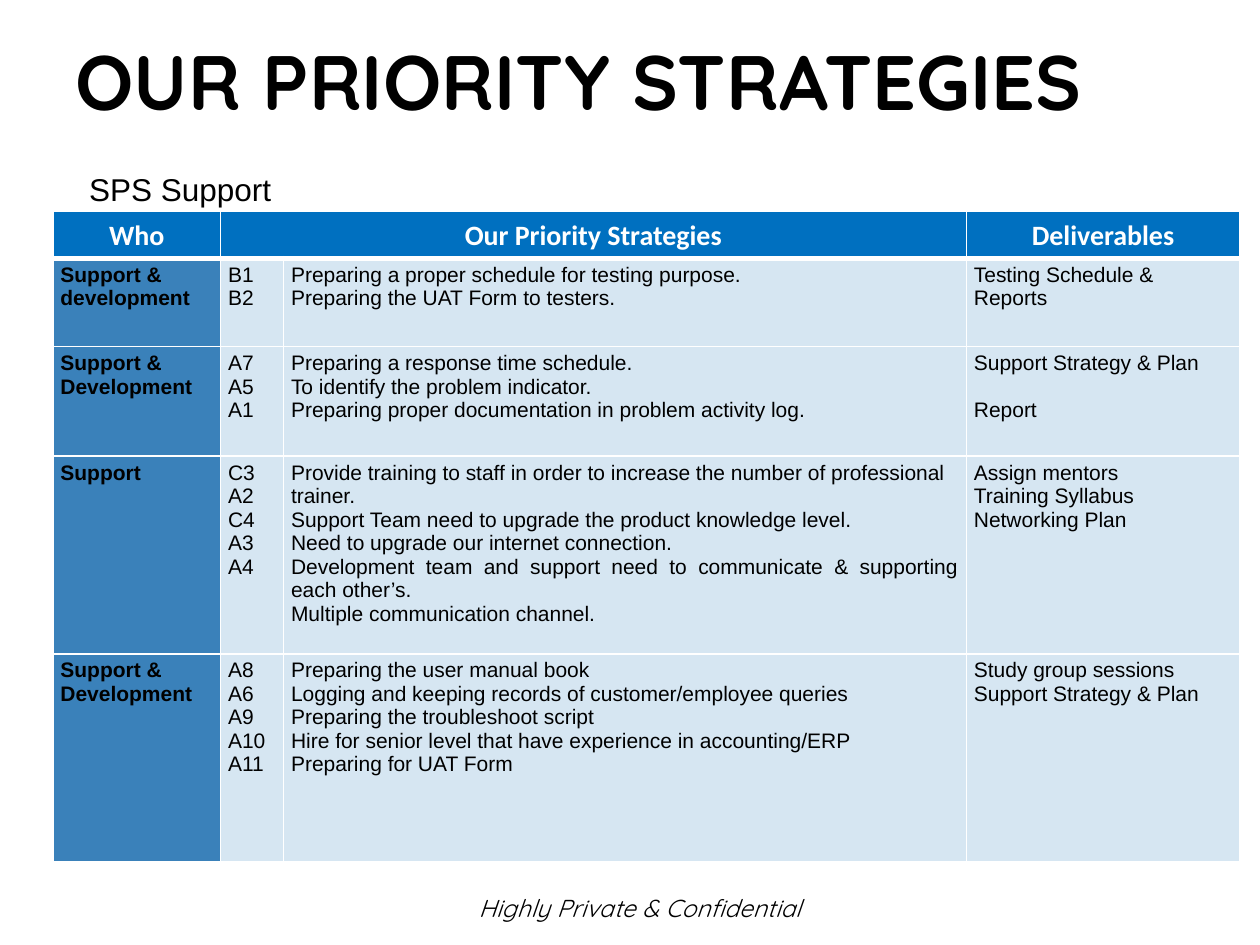
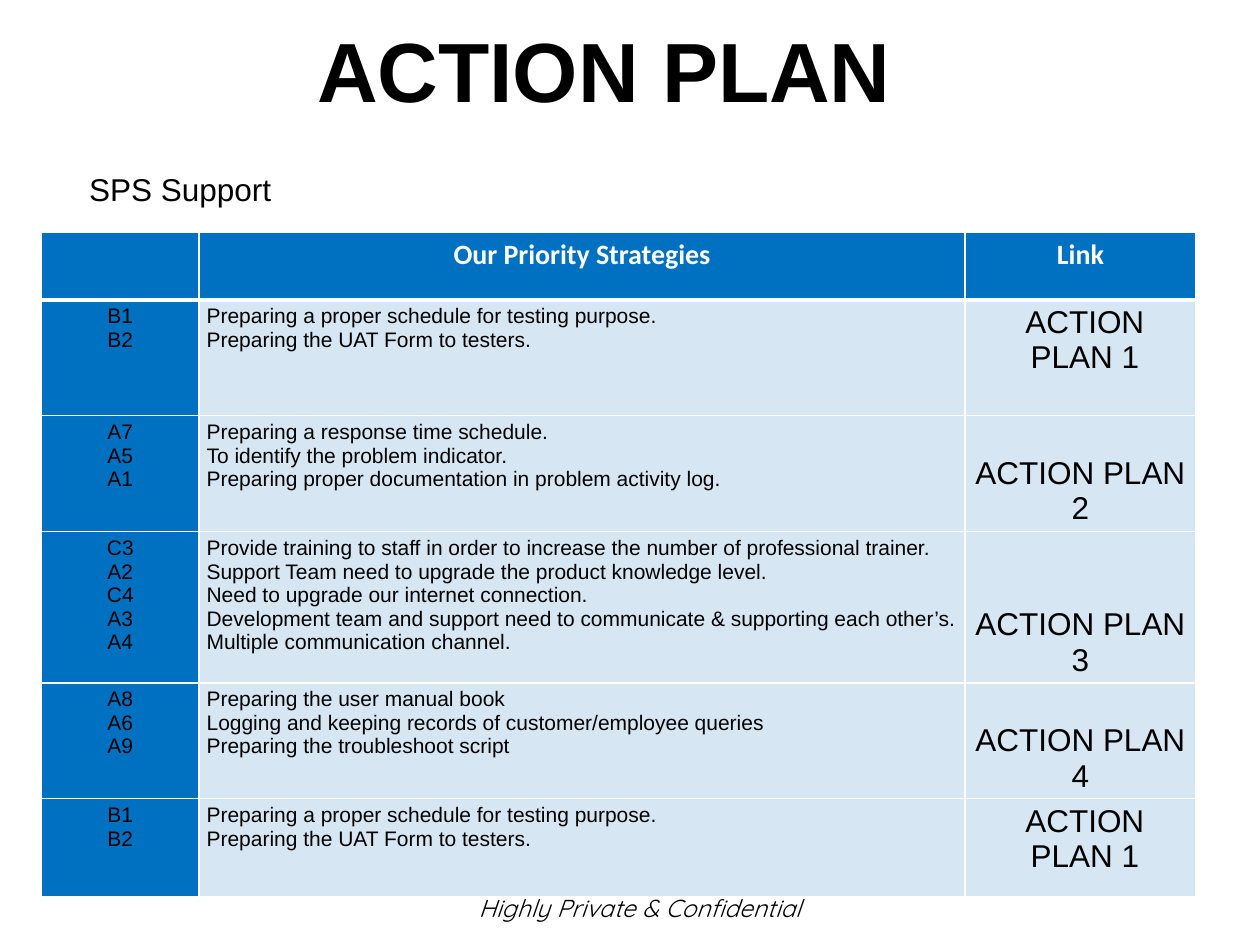
from lxml import etree
from pptx import Presentation
from pptx.dml.color import RGBColor
from pptx.enum.text import MSO_ANCHOR, MSO_AUTO_SIZE, PP_ALIGN
from pptx.oxml.ns import qn
from pptx.util import Pt

EMU_PER_PX = 9144  # 100 px to the inch
LEFT, CENTER, JUSTIFY = PP_ALIGN.LEFT, PP_ALIGN.CENTER, PP_ALIGN.JUSTIFY
TOP, MIDDLE, BOTTOM = MSO_ANCHOR.TOP, MSO_ANCHOR.MIDDLE, MSO_ANCHOR.BOTTOM
TITLE_ONLY = 5

COLORS = {
    "black": "000000",
    "white": "FFFFFF",
    "header": "0070C0",
    "who": "3A81BA",
    "body": "D6E6F2",
}
HEADER_TEXT = {"size": 16, "font": "Calibri", "color": "white", "bold": True, "align": CENTER}
DEFAULT_INSETS = (10, 5, 10, 5)
BODY_INSETS = (6, 4, 6, 4)
PLAN_1_INSETS = (13, 4, 6, 4)

TESTING = [
    ("B1", "Preparing a proper schedule for testing purpose."),
    ("B2", "Preparing the UAT Form to testers."),
]
RESPONSE = [
    ("A7", "Preparing a response time schedule."),
    ("A5", "To identify the problem indicator."),
    ("A1", "Preparing proper documentation in problem activity log."),
]
TRAINING = [
    ("C3", "Provide training to staff in order to increase the number of professional trainer."),
    ("A2", "Support Team need to upgrade the product knowledge level."),
    ("C4", "Need to upgrade our internet connection."),
    ("A3", "Development team and support need to communicate & supporting each other’s."),
    ("A4", "Multiple communication channel."),
]
KNOWLEDGE = [
    ("A8", "Preparing the user manual book"),
    ("A6", "Logging and keeping records of customer/employee queries"),
    ("A9", "Preparing the troubleshoot script"),
    ("A10", "Hire for senior level that have experience in accounting/ERP"),
    ("A11", "Preparing for UAT Form"),
]
JUSTIFIED_CODE = "A3"

# who, strategies, deliverables, space between the deliverables in points
PRIORITIES = [
    ("Support & development", TESTING, ["Testing Schedule & Reports"], 0),
    ("Support & Development", RESPONSE, ["Support Strategy & Plan", "Report"], 13.5),
    ("Support", TRAINING, ["Assign mentors", "Training Syllabus", "Networking Plan"], 0),
    ("Support & Development", KNOWLEDGE, ["Study group sessions", "Support Strategy & Plan"], 0),
]
# strategies, number of the action plan
ACTIONS = [(TESTING, 1), (RESPONSE, 2), (TRAINING, 3), (KNOWLEDGE[:3], 4), (TESTING, 1)]


def px(length):
    return length * EMU_PER_PX


def rgb(name):
    return RGBColor.from_string(COLORS[name])


def write(frame, lines, size=12, font="Arial", color="black", bold=False, italic=False,
          align=LEFT, gap=0, spacing=None):
    """Put one paragraph per line into the frame, gap points apart."""
    for index, line in enumerate(lines):
        para = frame.add_paragraph() if index else frame.paragraphs[0]
        para.alignment = align
        para.space_before = Pt(gap if index else 0)
        if spacing:
            para.line_spacing = spacing
        span = para.add_run()
        span.text = line
        span.font.size, span.font.name = Pt(size), font
        span.font.bold, span.font.italic = bold, italic
        span.font.color.rgb = rgb(color)


def set_insets(target, insets):
    (target.margin_left, target.margin_top,
     target.margin_right, target.margin_bottom) = map(px, insets)


def add_title(page, text, place, insets, anchor, **style):
    title = page.shapes.title
    title.left, title.top, title.width, title.height = map(px, place)
    frame = title.text_frame
    frame.auto_size = MSO_AUTO_SIZE.NONE
    frame.vertical_anchor = anchor
    set_insets(frame, insets)
    write(frame, [text], bold=True, align=CENTER, **style)


def add_text(page, text, place, insets=DEFAULT_INSETS, anchor=TOP, wrap=True, **style):
    box = page.shapes.add_textbox(*map(px, place))
    frame = box.text_frame
    frame.word_wrap = wrap
    frame.vertical_anchor = anchor
    set_insets(frame, insets)
    write(frame, [text], **style)


def add_table(page, left, top, columns, rows):
    """Add a table with white rules, heavier under the header row."""
    table = page.shapes.add_table(len(rows), len(columns), px(left), px(top),
                                  px(sum(columns)), px(sum(rows))).table
    table.first_row = table.horz_banding = False
    for column, width in zip(table.columns, columns):
        column.width = px(width)
    for index, (row, height) in enumerate(zip(table.rows, rows)):
        row.height = px(height)
        for cell in row.cells:
            draw_borders(cell, {"L": 1, "R": 1, "T": 3 if index == 1 else 1,
                                "B": 1 if index else 3})
            set_insets(cell, BODY_INSETS)
    return table


def draw_borders(cell, widths):
    properties = cell._tc.get_or_add_tcPr()
    for side, width in widths.items():
        line = etree.SubElement(properties, qn(f"a:ln{side}"), w=str(Pt(width)))
        fill = etree.SubElement(line, qn("a:solidFill"))
        etree.SubElement(fill, qn("a:srgbClr"), val=COLORS["white"])


def fill_cell(cell, lines, fill="body", insets=BODY_INSETS, anchor=TOP, **style):
    cell.fill.solid()
    cell.fill.fore_color.rgb = rgb(fill)
    cell.vertical_anchor = anchor
    set_insets(cell, insets)
    write(cell.text_frame, lines, **style)


def fill_strategies(code_cell, text_cell, strategies, **code_style):
    codes, texts = zip(*strategies)
    fill_cell(code_cell, codes, **code_style)
    fill_cell(text_cell, texts)
    if JUSTIFIED_CODE in codes:
        text_cell.text_frame.paragraphs[codes.index(JUSTIFIED_CODE)].alignment = JUSTIFY


def add_page(deck):
    """Add a page with the confidentiality footer and the team label."""
    page = deck.slides.add_slide(deck.slide_layouts[TITLE_ONLY])
    add_text(page, "Highly Private & Confidential", (370, 709, 337, 23), (10, 10, 10, 10),
             MIDDLE, size=14, font="Quicksand", italic=True)
    add_text(page, "SPS Support", (61, 130, 173, 40), wrap=False, size=18)
    return page


def build_priorities(deck):
    page = add_page(deck)
    add_title(page, "OUR PRIORITY STRATEGIES", (17, 23, 885, 80), (10, 10, 10, 10), MIDDLE,
              size=44, font="Quicksand")
    table = add_table(page, 42, 168, [133, 50, 542, 217], [37, 70, 87, 157, 165])
    table.cell(0, 1).merge(table.cell(0, 2))
    for column, heading in [(0, "Who"), (1, "Our Priority Strategies"), (3, "Deliverables")]:
        fill_cell(table.cell(0, column), [heading], "header", (4, 0, 4, 0), MIDDLE,
                  spacing=1.07, **HEADER_TEXT)
    for row, (who, strategies, deliverables, gap) in enumerate(PRIORITIES, 1):
        fill_cell(table.cell(row, 0), [who], "who", bold=True)
        fill_strategies(table.cell(row, 1), table.cell(row, 2), strategies)
        fill_cell(table.cell(row, 3), deliverables, gap=gap)


def build_actions(deck):
    page = add_page(deck)
    add_title(page, "ACTION PLAN", (50, 17, 859, 83), DEFAULT_INSETS, BOTTOM, size=48)
    table = add_table(page, 33, 184, [125, 608, 183], [54, 92, 92, 120, 92, 78])
    for column, headings in enumerate([[], ["Our Priority Strategies"], ["Link"]]):
        fill_cell(table.cell(0, column), headings, "header", DEFAULT_INSETS, **HEADER_TEXT)
    for row, (strategies, number) in enumerate(ACTIONS, 1):
        fill_strategies(table.cell(row, 0), table.cell(row, 1), strategies,
                        fill="header", align=CENTER)
        first = number == 1
        fill_cell(table.cell(row, 2), [f"ACTION PLAN {number}"],
                  insets=PLAN_1_INSETS if first else BODY_INSETS,
                  anchor=TOP if first else BOTTOM, size=18, align=CENTER)


def main():
    deck = Presentation()
    deck.slide_width, deck.slide_height = px(1000), px(750)
    build_priorities(deck)
    build_actions(deck)
    deck.save("out.pptx")


if __name__ == "__main__":
    main()
